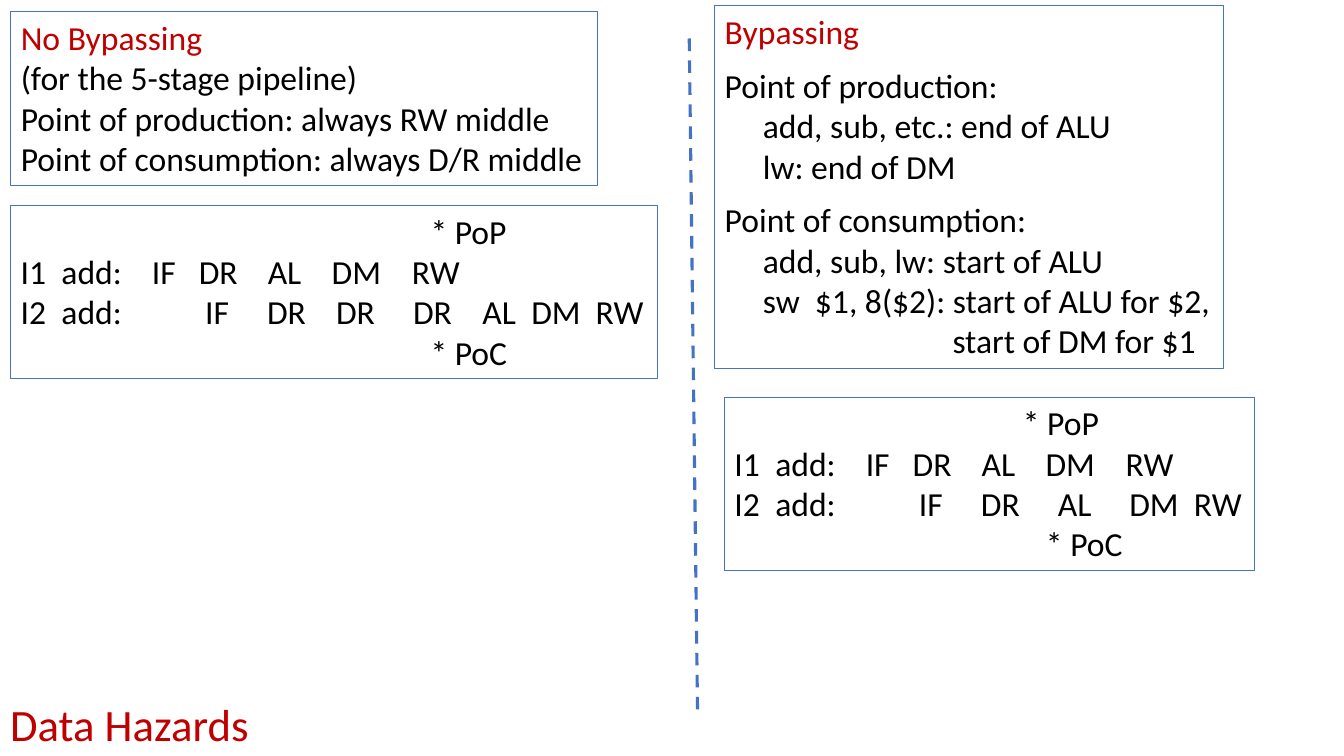
from dataclasses import dataclass

from lxml.etree import SubElement
from pptx import Presentation
from pptx.dml.color import RGBColor
from pptx.enum.dml import MSO_LINE_DASH_STYLE as Dash
from pptx.enum.shapes import MSO_CONNECTOR_TYPE as Connector
from pptx.enum.shapes import MSO_SHAPE as Shape
from pptx.enum.text import MSO_ANCHOR as Anchor
from pptx.enum.text import MSO_AUTO_SIZE as AutoSize
from pptx.enum.text import PP_ALIGN as Align
from pptx.oxml.ns import qn
from pptx.util import Cm, Pt

COLOURS = {"heading": "C00000", "text": "000000", "line": "4472C4"}
FONT = "Calibri"
TEXT_SIZE = 24
TITLE_SIZE = 32
GROUP_GAP = 9.6
INDENT = 0.96
DEEP_INDENT = 5.74


@dataclass(frozen=True)
class Line:
    text: str
    indent: float = 0
    gap: float = 0
    tabs: tuple[float, ...] = ()
    colour: str = "text"
    size: float = TEXT_SIZE


@dataclass(frozen=True)
class Panel:
    left: float
    top: float
    width: float
    height: float
    lines: tuple[Line, ...]


def stages(label: str, names: str, stops: tuple[float, ...]) -> Line:
    return Line("\t".join([label, "add:", *names.split()]), tabs=(1.03, *stops))


def marker(name: str, stop: float) -> Line:
    return Line(f"\t* {name}", tabs=(stop,))


FIRST_ADD = stages("I1", "IF DR AL DM RW", (3.31, 4.49, 6.23, 7.84, 9.86))

TITLE = Panel(0, 17.42, 6.6, 1.63, (
    Line("Data Hazards", colour="heading", size=TITLE_SIZE),
))

RULES = (
    Panel(0.27, 0.3, 14.78, 4.37, (
        Line("No Bypassing", colour="heading"),
        Line("(for the 5-stage pipeline)"),
        Line("Point of production: always RW middle"),
        Line("Point of consumption: always D/R middle"),
    )),
    Panel(18.01, 0.15, 12.83, 9.14, (
        Line("Bypassing", colour="heading"),
        Line("Point of production:", gap=GROUP_GAP),
        Line("add, sub, etc.: end of ALU", INDENT),
        Line("lw: end of DM", INDENT),
        Line("Point of consumption:", gap=GROUP_GAP),
        Line("add, sub, lw: start of ALU", INDENT),
        Line("sw  $1, 8($2): start of ALU for $2,", INDENT),
        Line("start of DM for $1", DEEP_INDENT),
    )),
)

PIPELINES = (
    Panel(0.27, 5.18, 16.31, 4.37, (
        marker("PoP", 10.33),
        FIRST_ADD,
        stages("I2", "IF DR DR DR AL DM RW",
               (4.65, 6.21, 7.95, 9.89, 11.64, 12.87, 14.49)),
        marker("PoC", 10.33),
    )),
    Panel(18.26, 10.01, 13.36, 4.37, (
        marker("PoP", 7.27),
        FIRST_ADD,
        stages("I2", "IF DR AL DM RW", (4.65, 6.21, 8.15, 9.95, 11.58)),
        marker("PoC", 7.85),
    )),
)


def colour(name: str) -> RGBColor:
    return RGBColor.from_string(COLOURS[name])


def write_line(para, line: Line) -> None:
    para.text = line.text
    para.alignment = Align.LEFT
    para.space_before = Pt(line.gap)
    properties = para._p.get_or_add_pPr()
    if line.tabs:
        tab_list = SubElement(properties, qn("a:tabLst"))
        for stop in line.tabs:
            SubElement(tab_list, qn("a:tab"), pos=str(Cm(stop)), algn="l")
    else:
        properties.set("marL", str(Cm(line.indent)))
        properties.set("indent", "0")
        SubElement(properties, qn("a:buNone"))
    para.font.name = FONT
    para.font.size = Pt(line.size)
    para.font.color.rgb = colour(line.colour)


def fill_panel(box, panel: Panel) -> None:
    box.left, box.top = Cm(panel.left), Cm(panel.top)
    box.width, box.height = Cm(panel.width), Cm(panel.height)
    frame = box.text_frame
    frame.auto_size = AutoSize.NONE
    frame.word_wrap = True
    frame.vertical_anchor = Anchor.TOP
    frame.margin_right = 0
    for index, line in enumerate(panel.lines):
        para = frame.add_paragraph() if index else frame.paragraphs[0]
        write_line(para, line)


def outline(box) -> None:
    box.fill.background()
    box.line.color.rgb = colour("line")
    box.line.width = Pt(0.75)


def add_divider(page) -> None:
    divider = page.shapes.add_connector(
        Connector.STRAIGHT, Cm(17.37), Cm(0.97), Cm(17.58), Cm(17.98))
    divider.line.color.rgb = colour("line")
    divider.line.width = Pt(2.25)
    divider.line.dash_style = Dash.DASH
    SubElement(divider._element.spPr, qn("a:effectLst"))


def main() -> None:
    deck = Presentation()
    deck.slide_width, deck.slide_height = Cm(33.87), Cm(19.05)
    page = deck.slides.add_slide(deck.slide_layouts.get_by_name("Two Content"))
    title, *bodies = page.placeholders
    fill_panel(title, TITLE)
    add_divider(page)
    for body, panel in zip(bodies, RULES):
        fill_panel(body, panel)
        outline(body)
    for panel in PIPELINES:
        box = page.shapes.add_shape(Shape.RECTANGLE, 0, 0, 0, 0)
        box.shadow.inherit = False
        fill_panel(box, panel)
        outline(box)
    deck.save("out.pptx")


if __name__ == "__main__":
    main()
